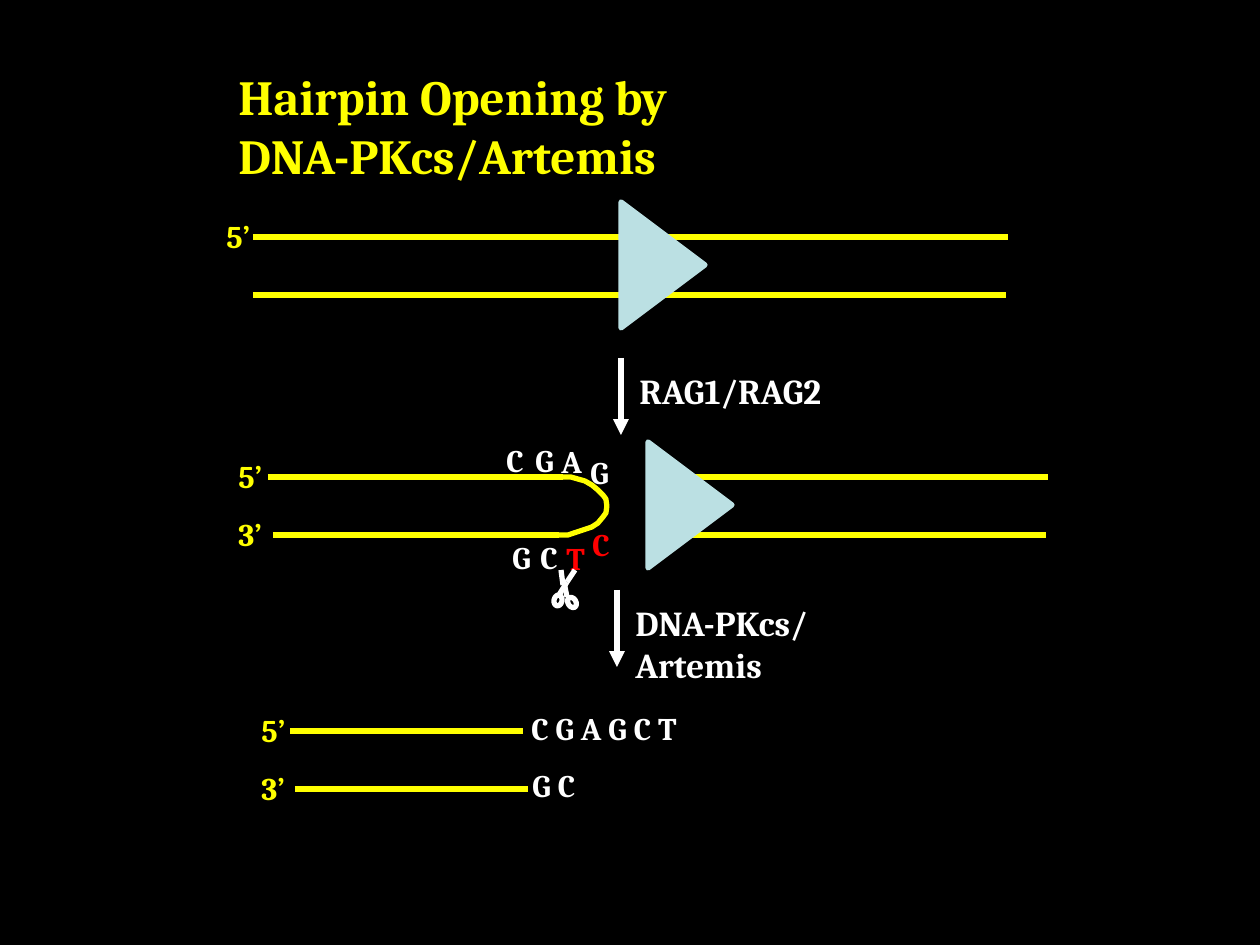
from lxml import etree
from pptx import Presentation
from pptx.dml.color import RGBColor
from pptx.enum.shapes import MSO_CONNECTOR as Connector, MSO_SHAPE as Shape
from pptx.oxml.ns import qn
from pptx.util import Pt

SCALE = 914400 / 126
COLORS = {"black": "000000", "yellow": "FFFF00", "white": "FFFFFF", "red": "FF0000", "signal": "BBE0E3"}
STRAND_GAP = 58


def px(value):
    """Turn px into EMU."""
    return round(value * SCALE)


def rgb(name):
    """Look up a named colour."""
    return RGBColor.from_string(COLORS[name])


def add_text(slide, text, left, top, width, height=50, size=18, color="white", font="Cambria", tail="", **tail_format):
    """Place bold text, with an optional tail run in its own format."""
    frame = slide.shapes.add_textbox(px(left), px(top), px(width), px(height)).text_frame
    frame.word_wrap = True
    paragraph = frame.paragraphs[0]
    base = {"color": color, "font": font}
    for content, style in ((text, base), (tail, {**base, **tail_format})):
        for index, line in enumerate(content.split("\n") if content else []):
            if index:
                paragraph.add_line_break()
            run = paragraph.add_run()
            run.text = line
            run.font.size, run.font.bold = Pt(size), True
            run.font.name = style["font"]
            run.font.color.rgb = rgb(style["color"])


def add_line(shapes, start, end, color="yellow", arrow=False):
    """Draw a straight line, with an arrowhead at its end if wanted."""
    line = shapes.add_connector(Connector.STRAIGHT, *map(px, (*start, *end)))
    line.line.color.rgb, line.line.width = rgb(color), Pt(3)
    if arrow:
        etree.SubElement(line.line._get_or_add_ln(), qn("a:tailEnd"), type="triangle")
    etree.SubElement(line._element.spPr, qn("a:effectLst"))


def style_shape(shape, fill=None, line=None):
    """Set the fill and outline of a shape."""
    shape.shadow.inherit = False
    if fill:
        shape.fill.solid()
        shape.fill.fore_color.rgb = rgb(fill)
    else:
        shape.fill.background()
    if line:
        shape.line.color.rgb, shape.line.width = rgb(line), Pt(3)
    else:
        shape.line.fill.background()


def add_strands(slide, left, top, upper, lower):
    """Draw two parallel strands, each given by its start and end."""
    for row, (start, end) in enumerate((upper, lower)):
        y = top + row * STRAND_GAP
        add_line(slide.shapes, (left + start, y), (left + end, y))


def add_end_label(slide, digit, left, strand_y):
    """Name a strand end beside its strand."""
    add_text(slide, digit, left, strand_y - 26, 60, color="yellow", tail="’", font="Cambria")


def add_end_labels(slide, digits, left, top):
    """Name the ends of the strands from top to bottom."""
    for row, digit in enumerate(digits):
        add_text(slide, digit, left, top - 26 + row * STRAND_GAP, 60, color="yellow", tail="’", **{"tail_font": "Arial"})


def add_signal(slide, left, top):
    """Draw the recombination signal, pointing right across both strands."""
    length, breadth = 126, 84
    center_x, center_y = left + breadth / 2, top + STRAND_GAP / 2 - 1
    triangle = slide.shapes.add_shape(Shape.ISOSCELES_TRIANGLE, px(center_x - length / 2), px(center_y - breadth / 2),
                                      px(length), px(breadth))
    triangle.rotation = 90
    style_shape(triangle, "signal", "signal")


def add_duplex(slide, left, top):
    """Draw the uncut duplex."""
    add_strands(slide, left, top, (39, 794), (39, 792))
    add_end_labels(slide, "5", left, top)
    add_signal(slide, left + 407, top)


def add_step(slide, left, top, enzyme, height):
    """Draw a down arrow with the enzyme beside it."""
    add_line(slide.shapes, (left, top), (left, top + 77), "white", arrow=True)
    add_text(slide, enzyme, left + 6, top + 5, 240, height, size=20)


def add_scissors(slide, left, top):
    """Draw open scissors with the blades up."""
    shapes = slide.shapes.add_group_shape().shapes
    for x, y, angle in ((0, 25, 11), (14, 27, 329)):
        handle = shapes.add_shape(Shape.OVAL, px(left + x), px(top + y), px(8), px(11))
        handle.rotation = angle
        style_shape(handle, line="white")
    for x1, y1, x2, y2 in ((5, 25, 13, 12), (13, 12, 21, 0), (13, 27, 10, 12), (9, 15, 7, 0)):
        add_line(shapes, (left + x1, top + y1), (left + x2, top + y2), "white")


def add_hairpin(slide, left, top):
    """Draw the hairpin end, its bases and the released signal end."""
    add_strands(slide, left, top, (42, 337), (47, 333))
    add_strands(slide, left, top, (427, 822), (424, 820))
    loop = [(337, 0), (345, 0), (352, 2), (359, 4), (366, 8), (372, 13), (377, 18), (380, 22), (381, 29), (380, 36),
            (377, 40), (372, 46), (366, 50), (357, 53), (348, 56), (342, 58), (331, 58)]
    points = [(px(left + x), px(top + y)) for x, y in loop]
    builder = slide.shapes.build_freeform(*points[0])
    builder.add_line_segments(points[1:], close=False)
    style_shape(builder.convert_to_shape(), line="yellow")
    add_end_labels(slide, "53", left, top)
    bases = [("C", 268, -42, "white"), ("G", 297, -42, "white"), ("A", 323, -41, "white"), ("G", 352, -30, "white"),
             ("G", 274, 55, "white"), ("C", 302, 55, "white"), ("T", 328, 56, "red"), ("C", 354, 42, "red")]
    for base, x, y, color in bases:
        add_text(slide, base, left + x, top + y, 50, color=color)
    add_signal(slide, left + 422, top)
    add_scissors(slide, left + 328, top + 93)


def add_opened_end(slide, left, top):
    """Draw the opened end with its overhang."""
    add_strands(slide, left, top, (41, 274), (46, 279))
    add_end_labels(slide, "53", left, top)
    add_text(slide, "C G A G ", left + 270, top - 28, 203, tail="C T", tail_color="red")
    add_text(slide, "G C", left + 271, top + 29, 81)


def main():
    """Build the slide and save it."""
    presentation = Presentation()
    presentation.slide_width, presentation.slide_height = px(1260), px(945)
    slide = presentation.slides.add_slide(presentation.slide_layouts[6])
    backdrop = slide.shapes.add_shape(Shape.RECTANGLE, 0, 0, px(1260), px(945))
    style_shape(backdrop, "black")
    add_text(slide, "Hairpin Opening by\nDNA-PKcs/Artemis", 226, 60, 873, 130, size=28, color="yellow")
    add_duplex(slide, 214, 237)
    add_step(slide, 621, 358, "RAG1/RAG2", 54)
    add_hairpin(slide, 226, 477)
    add_step(slide, 617, 590, "DNA-PKcs/\nArtemis", 96)
    add_opened_end(slide, 249, 731)
    presentation.save("out.pptx")


if __name__ == "__main__":
    main()
